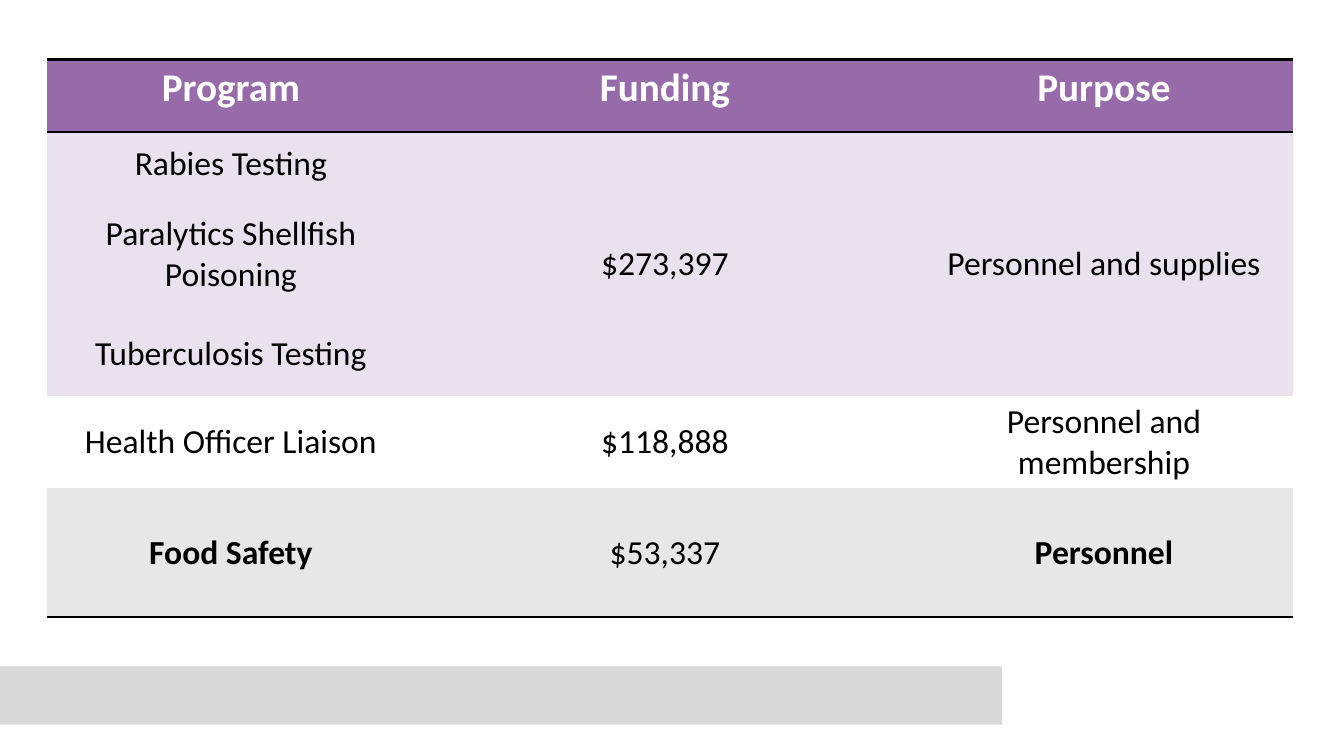
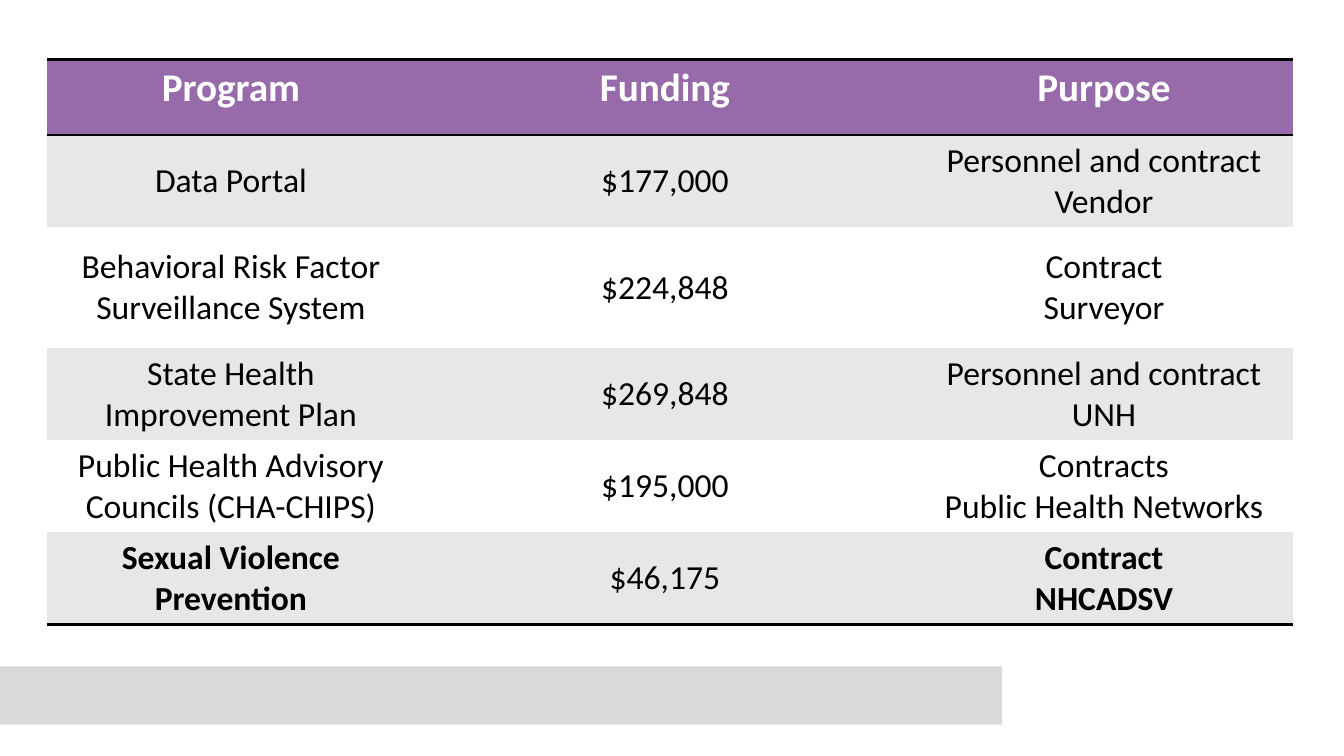
from lxml import etree
from pptx import Presentation
from pptx.dml.color import RGBColor
from pptx.enum.shapes import MSO_SHAPE
from pptx.enum.text import MSO_ANCHOR, PP_ALIGN
from pptx.oxml.ns import qn
from pptx.util import Inches, Pt

RECT = MSO_SHAPE.RECTANGLE
CENTER = PP_ALIGN.CENTER
TOP, MIDDLE = MSO_ANCHOR.TOP, MSO_ANCHOR.MIDDLE

SLIDE_W, SLIDE_H = 13.33, 7.5
FONT = "Calibri"
PURPLE, LILAC, GRAY = "976BA9", "EAE1EE", "E7E7E7"
WHITE, BLACK, BAND = "FFFFFF", "000000", "D9D9D9"
NO_GRID_STYLE = "{2D5ABB26-0587-4C30-8999-92F81FD0307C}"
RULE_PT = 2

TABLE_LEFT, TABLE_TOP = 0.47, 0.59
COLUMNS = (3.64, 4.97, 3.74)
HEADINGS = ("Program", "Funding", "Purpose")

# Each row: height, fill, texts; None continues the cell above.
LAB_ROWS = (
    (0.64, LILAC, ("Rabies Testing", "$273,397", "Personnel and supplies")),
    (1.15, LILAC, ("Paralytics Shellfish Poisoning", None, None)),
    (0.83, LILAC, ("Tuberculosis Testing", None, None)),
    (0.86, WHITE, ("Health Officer Liaison", "$118,888",
                   "Personnel and membership")),
    (1.28, GRAY, ("Food Safety", "$53,337", "Personnel")),
)
PLANNING_ROWS = (
    (0.67, GRAY, ("Data Portal", "$177,000",
                  "Personnel and contract\nVendor")),
    (1.2, WHITE, ("Behavioral Risk Factor Surveillance System", "$224,848",
                  "Contract\nSurveyor")),
    (0.87, GRAY, ("State Health Improvement Plan", "$269,848",
                  "Personnel and contract\nUNH")),
    (0.67, WHITE, ("Public Health Advisory Councils (CHA-CHIPS)", "$195,000",
                   "Contracts\nPublic Health Networks")),
    (0.67, GRAY, ("Sexual Violence Prevention", "$46,175",
                  "Contract\nNHCADSV")),
)


def rgb(color):
    return RGBColor.from_string(color)


def add_rule(cell, side):
    """Draw a black border on the cell's side: T or B."""
    tc_pr = cell._tc.get_or_add_tcPr()
    line = etree.SubElement(tc_pr, qn(f"a:ln{side}"), w=str(Pt(RULE_PT)))
    fill = etree.SubElement(line, qn("a:solidFill"))
    etree.SubElement(fill, qn("a:srgbClr"), val=BLACK)


def style_cell(cell, fill, sides):
    for side in sides:
        add_rule(cell, side)
    cell.fill.solid()
    cell.fill.fore_color.rgb = rgb(fill)


def write_cell(cell, text, size, color, bold, anchor):
    cell.vertical_anchor = anchor
    cell.text_frame.text = text
    for p in cell.text_frame.paragraphs:
        p.alignment = CENTER
        p.font.name = FONT
        p.font.size = Pt(size)
        p.font.bold = bold
        p.font.color.rgb = rgb(color)


def merge_down(table, row, col):
    """Join the cell to the cells that continue it below."""
    last = row
    while last + 1 < len(table.rows) and table.cell(last + 1, col).text == "":
        last += 1
    if last > row:
        table.cell(row, col).merge(table.cell(last, col))


def add_funding_table(s, left, top, header_height, body):
    rows = ((header_height, PURPLE, HEADINGS),) + body
    last = len(rows) - 1
    table = s.shapes.add_table(
        len(rows), len(COLUMNS), Inches(left), Inches(top),
        Inches(sum(COLUMNS)), Inches(sum(row[0] for row in rows))).table
    table._tbl.tblPr.find(qn("a:tableStyleId")).text = NO_GRID_STYLE
    for column, width in zip(table.columns, COLUMNS):
        column.width = Inches(width)
    for i, (height, fill, texts) in enumerate(rows):
        table.rows[i].height = Inches(height)
        sides = "TB" if i == 0 else "B" if i == last else ""
        for j, text in enumerate(texts):
            cell = table.cell(i, j)
            style_cell(cell, fill, sides)
            if text is None:
                continue
            if i == 0:
                write_cell(cell, text, 28, WHITE, True, TOP)
            else:
                bold = i == last and HEADINGS[j] != "Funding"
                write_cell(cell, text, 24, BLACK, bold, MIDDLE)
    for i, (_, _, texts) in enumerate(rows):
        for j, text in enumerate(texts):
            if text is not None:
                merge_down(table, i, j)


def add_footer_band(s):
    band = s.shapes.add_shape(RECT, 0, Inches(6.61), Inches(9.94),
                              Inches(0.58))
    band.shadow.inherit = False
    band.fill.solid()
    band.fill.fore_color.rgb = rgb(BAND)
    band.line.fill.background()


def add_funding_slide(prs, header_height, body):
    s = prs.slides.add_slide(prs.slide_layouts[6])
    add_footer_band(s)
    add_funding_table(s, TABLE_LEFT, TABLE_TOP, header_height, body)


def main():
    prs = Presentation()
    prs.slide_width, prs.slide_height = Inches(SLIDE_W), Inches(SLIDE_H)
    add_funding_slide(prs, 0.72, LAB_ROWS)
    add_funding_slide(prs, 0.75, PLANNING_ROWS)
    prs.save("out.pptx")


if __name__ == "__main__":
    main()
